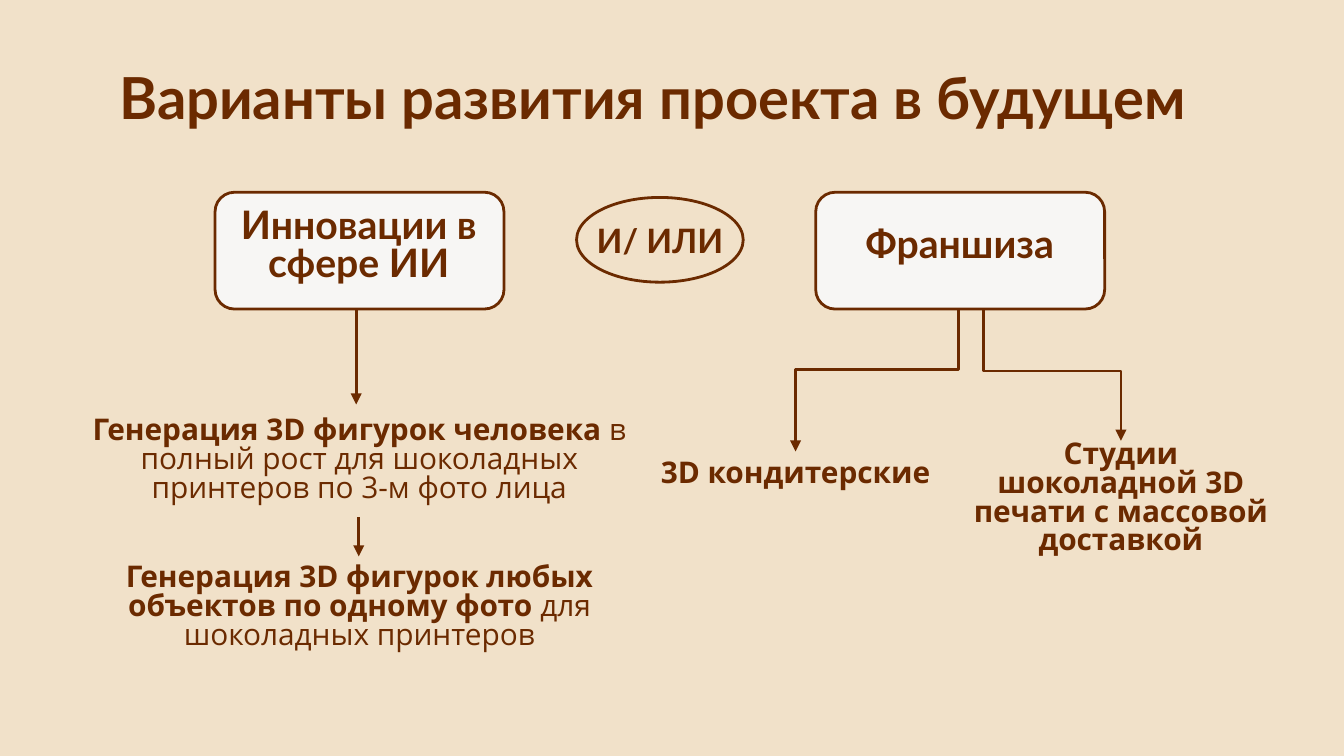
from dataclasses import dataclass

from lxml import etree
from pptx import Presentation
from pptx import util as u
from pptx.dml import color
from pptx.enum import shapes, text
from pptx.oxml import ns

BROWN, CREAM, WHITE = "6B2A00", "F1E1C9", "F7F6F4"
HEAD, BODY = "Lato", "Open Sans"


@dataclass
class Box:
    kind: shapes.MSO_SHAPE
    x: float
    y: float
    w: float
    h: float
    fill: str = ""


@dataclass
class Label:
    x: float
    y: float
    w: float
    h: float
    bold: str
    plain: str = ""
    size: float = 16
    font: str = BODY
    spacing: float = 0.8
    align: text.PP_ALIGN = text.PP_ALIGN.CENTER


@dataclass
class Arrow:
    x1: float
    y1: float
    x2: float
    y2: float


ROUNDED, OVAL = shapes.MSO_SHAPE.ROUNDED_RECTANGLE, shapes.MSO_SHAPE.OVAL
BOXES = [Box(ROUNDED, x, 103, 154.8, 62.6, WHITE) for x in (115.2, 437)]
BOXES.append(Box(OVAL, 308.9, 105.8, 89.3, 45.4))

ARROWS = [
    Arrow(527, 161.3, 600.5, 236.2),
    Arrow(513.4, 154.1, 426.2, 241.9),
    Arrow(190.8, 165.6, 190.8, 216.7),
    Arrow(192.2, 277.2, 192.2, 298.1),
]

LABELS = [
    Label(56.9, 28.8, 607, 45.4, "Варианты развития проекта в будущем",
          size=31, font=HEAD, spacing=1, align=text.PP_ALIGN.LEFT),
    Label(105.1, 101.5, 174.2, 61.9, "Инновации в сфере ИИ", size=21, font=HEAD),
    Label(427, 101.5, 174.2, 61.9, "Франшиза", size=21, font=HEAD),
    Label(311.8, 108.7, 83.5, 39.6, "И/ ИЛИ", size=18, font=HEAD, spacing=1),
    Label(339.1, 229, 174.2, 50.4, "3D кондитерские"),
    Label(513.4, 236.2, 174.2, 62.6, "Студии шоколадной 3D печати с массовой доставкой"),
    Label(42.5, 202.3, 300.2, 89.3, "Генерация 3D фигурок человека ",
          "в полный рост для шоколадных принтеров по 3-м фото лица"),
    Label(42.5, 300.2, 300.2, 51.1, "Генерация 3D фигурок любых объектов по одному фото ",
          "для шоколадных принтеров"),
]


def rgb(value: str) -> color.RGBColor:
    return color.RGBColor.from_string(value)


def add_run(p, words: str, *, size: float, font: str, bold: bool = False) -> None:
    r = p.add_run()
    r.text = words
    r.font.size, r.font.name, r.font.bold = u.Pt(size), font, bold
    r.font.color.rgb = rgb(BROWN)


def set_line(sp) -> None:
    sp.line.color.rgb = rgb(BROWN)
    sp.line.width = u.Pt(1.5)


def draw_box(s, b: Box) -> None:
    sp = s.shapes.add_shape(b.kind, u.Pt(b.x), u.Pt(b.y), u.Pt(b.w), u.Pt(b.h))
    sp.shadow.inherit = False
    set_line(sp)
    if b.fill:
        sp.fill.solid()
        sp.fill.fore_color.rgb = rgb(b.fill)
    else:
        sp.fill.background()


def draw_label(s, l: Label) -> None:
    tf = s.shapes.add_textbox(u.Pt(l.x), u.Pt(l.y), u.Pt(l.w), u.Pt(l.h)).text_frame
    tf.word_wrap = True
    tf.vertical_anchor = text.MSO_ANCHOR.MIDDLE
    tf.margin_left = tf.margin_right = tf.margin_top = tf.margin_bottom = u.Pt(7.2)
    p = tf.paragraphs[0]
    p.alignment, p.line_spacing = l.align, l.spacing
    add_run(p, l.bold, size=l.size, font=l.font, bold=True)
    if l.plain:
        add_run(p, l.plain, size=l.size, font=l.font)


def draw_arrow(s, a: Arrow) -> None:
    """Draw a downward arrow; a bent one is an elbow turned by a quarter."""
    kind, ends, turn = shapes.MSO_CONNECTOR.STRAIGHT, (a.x1, a.y1, a.x2, a.y2), 0
    if a.x1 != a.x2:
        kind = shapes.MSO_CONNECTOR.ELBOW
        cx, cy = (a.x1 + a.x2) / 2, (a.y1 + a.y2) / 2
        w, h = a.y2 - a.y1, abs(a.x2 - a.x1)
        side, turn = (1, 270) if a.x2 > a.x1 else (-1, 90)
        ends = (cx + side * w / 2, cy - h / 2, cx - side * w / 2, cy + h / 2)
    sp = s.shapes.add_connector(kind, *(u.Pt(v) for v in ends))
    set_line(sp)
    pr = sp._element.spPr
    if turn:
        pr.find(ns.qn("a:xfrm")).set("rot", str(turn * 60000))
    etree.SubElement(pr.find(ns.qn("a:ln")), ns.qn("a:tailEnd"), type="triangle")
    etree.SubElement(pr, ns.qn("a:effectLst"))


def main() -> None:
    prs = Presentation()
    prs.slide_width, prs.slide_height = u.Pt(720), u.Pt(405)
    s = prs.slides.add_slide(prs.slide_layouts[6])
    s.background.fill.solid()
    s.background.fill.fore_color.rgb = rgb(CREAM)
    for draw, items in ((draw_arrow, ARROWS), (draw_box, BOXES), (draw_label, LABELS)):
        for item in items:
            draw(s, item)
    prs.save("out.pptx")


if __name__ == "__main__":
    main()
